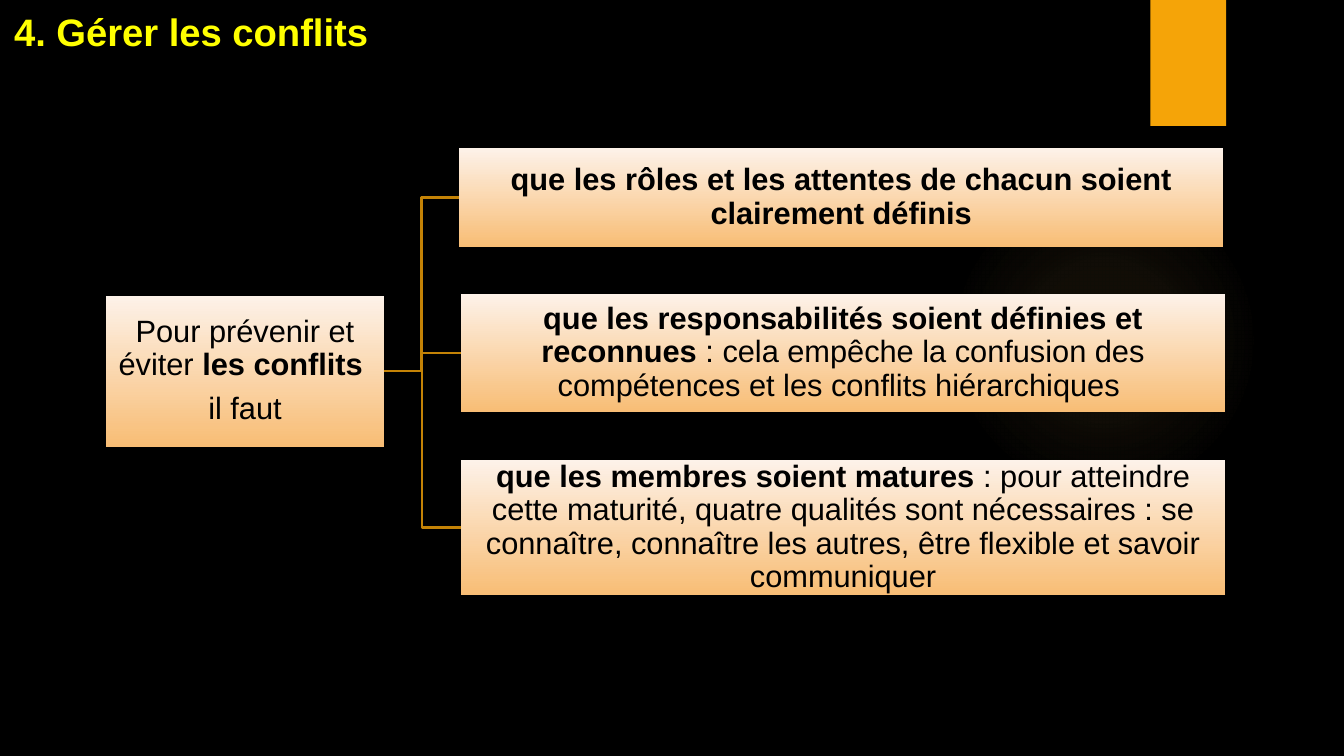
"""Builds a slide on preventing conflicts: one cause box linked to three conditions."""
from lxml.etree import SubElement
from pptx import Presentation
from pptx.dml.color import RGBColor
from pptx.enum.shapes import MSO_CONNECTOR, MSO_SHAPE
from pptx.enum.text import MSO_ANCHOR, MSO_AUTO_SIZE, PP_ALIGN
from pptx.oxml import parse_xml
from pptx.oxml.ns import nsdecls, qn
from pptx.util import Pt


def colour(hex_text):
    return RGBColor.from_string(hex_text)


class ConflictSlide:
    FONT = "Arial"
    BLACK = "000000"
    YELLOW = "FFFF00"
    ORANGE = "F5A408"
    GLOW = "FAC96A"
    LINK = "C48306"
    BOX_TOP, BOX_BOTTOM = "FDF2E9", "F8BD75"
    TITLE_SIZE, BODY_SIZE = 27.3, 22

    def __init__(self, presentation):
        self.slide = presentation.slides.add_slide(presentation.slide_layouts[5])
        background = self.slide.background.fill
        background.solid()
        background.fore_color.rgb = colour(self.BLACK)

    def shape(self, kind, left, top, width, height):
        shape = self.slide.shapes.add_shape(kind, Pt(left), Pt(top), Pt(width), Pt(height))
        shape.shadow.inherit = False
        shape.line.fill.background()
        return shape

    def style(self, font, size, hex_text, bold):
        font.name = self.FONT
        font.size = Pt(size)
        font.bold = bold
        font.color.rgb = colour(hex_text)

    def halo(self, left, top, diameter, stops):
        halo = self.shape(MSO_SHAPE.OVAL, left, top, diameter, diameter)
        stop_xml = "".join(
            f'<a:gs pos="{position * 1000}"><a:srgbClr val="{self.GLOW}">'
            f'<a:alpha val="{alpha * 1000}"/></a:srgbClr></a:gs>'
            for position, alpha in stops
        )
        gradient = parse_xml(
            f'<a:gradFill {nsdecls("a")}><a:gsLst>{stop_xml}</a:gsLst><a:path path="circle">'
            '<a:fillToRect l="50000" t="50000" r="50000" b="50000"/></a:path></a:gradFill>'
        )
        halo._element.spPr.find(qn("a:prstGeom")).addnext(gradient)

    def tab(self, left, top, width, height):
        tab = self.shape(MSO_SHAPE.RECTANGLE, left, top, width, height)
        tab.fill.solid()
        tab.fill.fore_color.rgb = colour(self.ORANGE)

    def title(self, text, left, top, width, height):
        title = self.slide.shapes.title
        title.left, title.top, title.width, title.height = map(Pt, (left, top, width, height))
        frame = title.text_frame
        frame.text = text
        frame.auto_size = MSO_AUTO_SIZE.NONE
        frame.vertical_anchor = MSO_ANCHOR.BOTTOM
        frame.paragraphs[0].alignment = PP_ALIGN.LEFT
        self.style(frame.paragraphs[0].runs[0].font, self.TITLE_SIZE, self.YELLOW, True)

    def box(self, left, top, width, height, paragraphs):
        box = self.shape(MSO_SHAPE.RECTANGLE, left, top, width, height)
        box.fill.gradient()
        box.fill.gradient_angle = 270
        for stop, shade in zip(box.fill.gradient_stops, (self.BOX_TOP, self.BOX_BOTTOM)):
            stop.color.rgb = colour(shade)
        frame = box.text_frame
        frame.word_wrap = True
        frame.vertical_anchor = MSO_ANCHOR.MIDDLE
        frame.margin_left = frame.margin_right = frame.margin_top = frame.margin_bottom = Pt(1.4)
        for index, pieces in enumerate(paragraphs):
            paragraph = frame.add_paragraph() if index else frame.paragraphs[0]
            paragraph.alignment = PP_ALIGN.CENTER
            paragraph.line_spacing = 0.9
            paragraph.space_after = Pt(7.7)
            for text, bold in pieces:
                run = paragraph.add_run()
                run.text = text
                self.style(run.font, self.BODY_SIZE, self.BLACK, bold)
        return box

    def link(self, source, target):
        link = self.slide.shapes.add_connector(MSO_CONNECTOR.ELBOW, 0, 0, 0, 0)
        link.begin_connect(source, 3)
        link.end_connect(target, 1)
        link.line.color.rgb = colour(self.LINK)
        link.line.width = Pt(1.5)
        SubElement(link._element.spPr, qn("a:effectLst"))


def main():
    presentation = Presentation()
    presentation.slide_width, presentation.slide_height = Pt(960), Pt(540)
    page = ConflictSlide(presentation)
    page.halo(677.5, 131.8, 221.8, [(0, 7), (36, 6), (69, 0)])
    page.tab(821.8, 0, 54, 90)
    page.title("4. Gérer les conflits", 2.9, 0, 946, 42.5)

    goal = page.box(75.8, 211.2, 198.4, 108, [
        [("Pour prévenir et éviter ", False), ("les conflits ", True)],
        [("il faut", False)],
    ])
    conditions = [
        (328, 105.8, 70.6, [
            ("que les rôles et les attentes de chacun soient clairement définis", True),
        ]),
        (329.3, 210, 84.3, [
            ("que les responsabilités soient définies et reconnues", True),
            (" : cela empêche la confusion des compétences et les conflits hiérarchiques ", False),
        ]),
        (329.3, 328.5, 96.5, [
            ("que les membres soient matures", True),
            (" : pour atteindre cette maturité, quatre qualités sont nécessaires : se connaître, "
             "connaître les autres, être flexible et savoir communiquer", False),
        ]),
    ]
    for left, top, height, pieces in conditions:
        condition = page.box(left, top, 545.8, height, [pieces])
        page.link(goal, condition)

    presentation.save("out.pptx")


if __name__ == "__main__":
    main()
